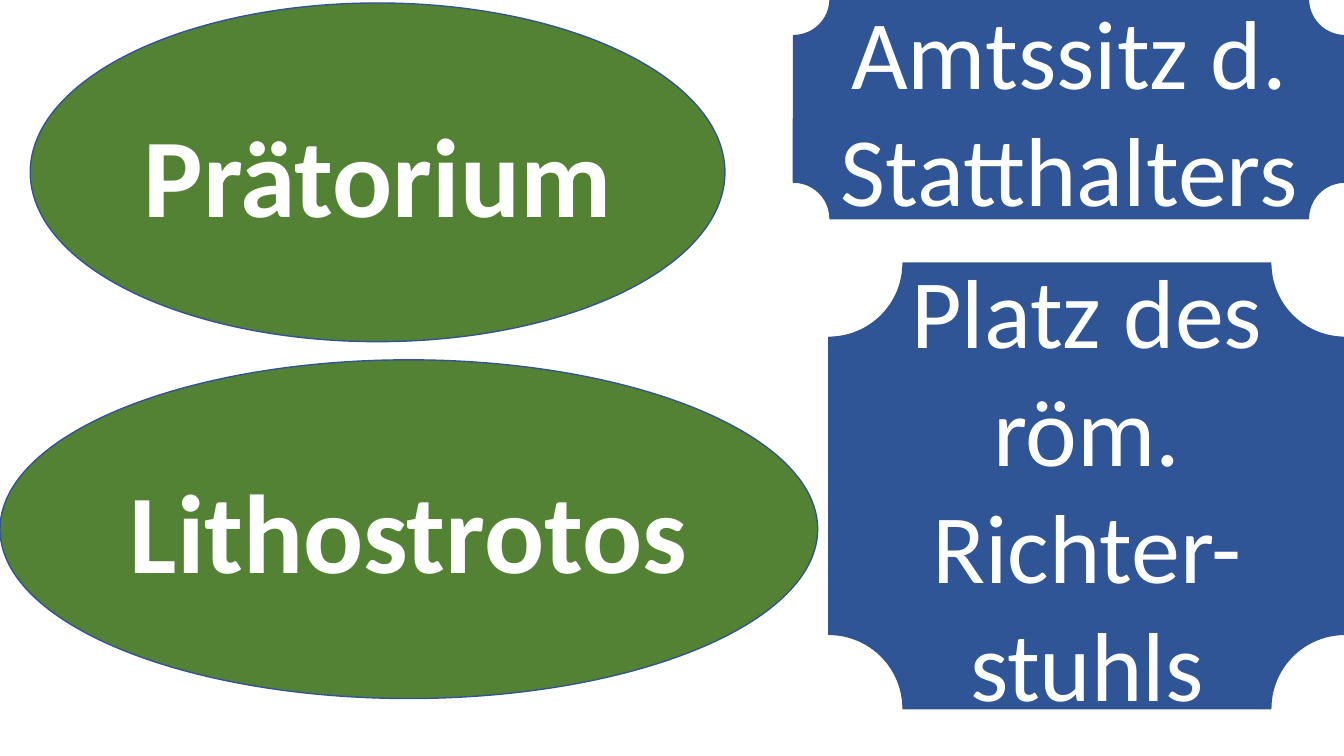
from pptx import Presentation
from pptx.dml.color import RGBColor
from pptx.enum.shapes import MSO_SHAPE
from pptx.enum.text import MSO_ANCHOR, PP_ALIGN
from pptx.util import Inches, Pt

GREEN, BLUE, OUTLINE, WHITE = "548235", "2F5597", "325491", "FFFFFF"


def color(hex_string):
    return RGBColor.from_string(hex_string)


def add_label(slide, kind, box, fill, lines, size, bold):
    """Place a filled shape in box with one centred paragraph per line."""
    shape = slide.shapes.add_shape(kind, *map(Inches, box))
    shape.shadow.inherit = False
    shape.fill.solid()
    shape.fill.fore_color.rgb = color(fill)
    shape.line.color.rgb = color(OUTLINE)
    shape.line.width = Pt(1)

    frame = shape.text_frame
    frame.word_wrap = True
    frame.vertical_anchor = MSO_ANCHOR.MIDDLE
    for index, line in enumerate(lines):
        paragraph = frame.add_paragraph() if index else frame.paragraphs[0]
        paragraph.alignment = PP_ALIGN.CENTER
        run = paragraph.add_run()
        run.text = line
        run.font.name = "Calibri"
        run.font.size = Pt(size)
        run.font.bold = bold
        run.font.color.rgb = color(WHITE)


def add_term(slide, box, term):
    add_label(slide, MSO_SHAPE.OVAL, box, GREEN, [term], 80, True)


def add_meaning(slide, box, lines):
    add_label(slide, MSO_SHAPE.PLAQUE, box, BLUE, lines, 70, False)


def main():
    presentation = Presentation()
    presentation.slide_width = Inches(13.33)
    presentation.slide_height = Inches(7.5)
    slide = presentation.slides.add_slide(presentation.slide_layouts[6])

    add_term(slide, (0.3, 0.03, 6.89, 3.36), "Prätorium")
    add_meaning(slide, (7.87, -0.01, 5.47, 2.18), ["Amtssitz d. Statthalters"])
    add_term(slide, (0, 3.57, 8.11, 3.36), "Lithostrotos")
    add_meaning(slide, (8.22, 2.61, 5.12, 4.42),
                ["Platz des röm.", "Richter-stuhls"])

    presentation.save("out.pptx")


if __name__ == "__main__":
    main()
